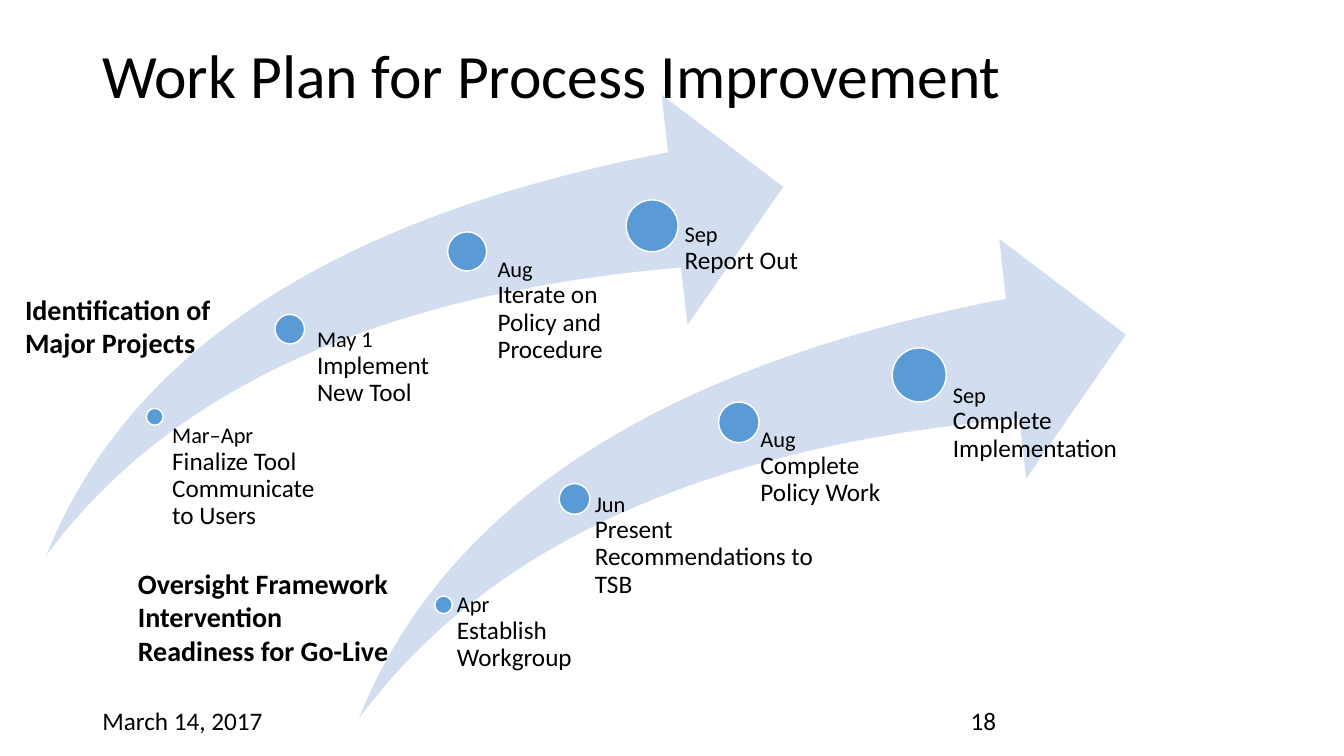
"""Build the process improvement work plan slide with two milestone arrows."""
from dataclasses import dataclass

import pptx
import pptx.dml.color
import pptx.enum.shapes
import pptx.enum.text
import pptx.shapes.autoshape
import pptx.slide
import pptx.util

COLOURS = {"arrow": "D2DEEF", "dot": "5B9BD5", "outline": "FFFFFF", "text": "000000"}
FONT = "Calibri"
DOT_SHARES = (0.023, 0.04, 0.053, 0.0704)
LABEL_INSET_SHARE = 0.53
Shape = pptx.enum.shapes.MSO_SHAPE


@dataclass(frozen=True)
class Frame:
    left: float
    top: float
    width: float
    height: float


@dataclass(frozen=True)
class Line:
    text: str
    size: float
    bold: bool = False


@dataclass(frozen=True)
class Caption:
    frame: Frame
    lines: tuple[Line, ...]
    spacing: float = 1.0


@dataclass(frozen=True)
class Milestone:
    centre: tuple[float, float]
    label: Frame
    date: str
    tasks: tuple[str, ...]


@dataclass(frozen=True)
class Track:
    arrow: Frame
    milestones: tuple[Milestone, ...]


TRACKS = (
    Track(Frame(256.3, 170.6, 547.9, 342.7), (
        Milestone((316.8, 432), Frame(319.7, 424, 118, 81.4), "Apr", ("Establish Workgroup",)),
        Milestone((410.4, 356.4), Frame(413.3, 352, 196.6, 156), "Jun",
                  ("Present Recommendations to TSB",)),
        Milestone((527.8, 301.7), Frame(527.8, 306, 115, 207), "Aug", ("Complete Policy Work",)),
        Milestone((656.6, 267.8), Frame(660.2, 274.3, 179.3, 98.6), "Sep",
                  ("Complete Implementation",)),
    )),
    Track(Frame(33.1, 67.7, 526.3, 329), (
        Milestone((110.5, 297.7), Frame(116.6, 303.1, 123, 78.5), "Mar–Apr",
                  ("Finalize Tool", "Communicate to Users")),
        Milestone((207, 235.1), Frame(215.3, 234.7, 111, 150.5), "May 1",
                  ("Implement New Tool",)),
        Milestone((333.7, 179.6), Frame(340.6, 184.3, 111, 204), "Aug",
                  ("Iterate on Policy and Procedure",)),
        Milestone((465.8, 161.3), Frame(469.4, 159.8, 111, 236), "Sep", ("Report Out",)),
    )),
)

CAPTIONS = (
    Caption(Frame(66, 28.8, 828, 104.4), (Line("Work Plan for Process Improvement", 44),), 0.9),
    Caption(Frame(10.8, 205.2, 172.8, 55.7),
            (Line("Identification of Major Projects", 20, True),)),
    Caption(Frame(91.4, 401, 199.4, 101.5),
            (Line("Oversight Framework", 20, True), Line("Intervention", 20, True),
             Line("Readiness for Go-Live", 20, True))),
    Caption(Frame(66, 500.4, 216, 28.8), (Line("March 14, 2017", 18),)),
    Caption(Frame(686.2, 500.4, 68.4, 28.8), (Line("18", 18),)),
)


def colour(name: str) -> pptx.dml.color.RGBColor:
    return pptx.dml.color.RGBColor.from_string(COLOURS[name])


def points(frame: Frame) -> tuple[pptx.util.Length, ...]:
    return tuple(pptx.util.Pt(value)
                 for value in (frame.left, frame.top, frame.width, frame.height))


def add_filled(page: pptx.slide.Slide, kind: Shape, frame: Frame,
               fill: str) -> pptx.shapes.autoshape.Shape:
    shape = page.shapes.add_shape(kind, *points(frame))
    shape.shadow.inherit = False
    shape.fill.solid()
    shape.fill.fore_color.rgb = colour(fill)
    shape.line.fill.background()
    return shape


def add_text(page: pptx.slide.Slide, caption: Caption) -> pptx.shapes.autoshape.Shape:
    box = page.shapes.add_textbox(*points(caption.frame))
    text_frame = box.text_frame
    text_frame.word_wrap = True
    text_frame.vertical_anchor = pptx.enum.text.MSO_ANCHOR.TOP
    for index, line in enumerate(caption.lines):
        para = text_frame.add_paragraph() if index else text_frame.paragraphs[0]
        para.line_spacing = caption.spacing
        span = para.add_run()
        span.text = line.text
        span.font.name = FONT
        span.font.size = pptx.util.Pt(line.size)
        span.font.bold = line.bold
        span.font.color.rgb = colour("text")
    return box


def add_milestone(page: pptx.slide.Slide, milestone: Milestone, diameter: float) -> None:
    across, down = milestone.centre
    radius = diameter / 2
    dot = add_filled(page, Shape.OVAL,
                     Frame(across - radius, down - radius, diameter, diameter), "dot")
    dot.line.color.rgb = colour("outline")
    dot.line.width = pptx.util.Pt(1)
    lines = (Line(milestone.date, 16), *(Line(task, 18) for task in milestone.tasks))
    text_frame = add_text(page, Caption(milestone.label, lines, 0.9)).text_frame
    text_frame.margin_left = pptx.util.Pt(diameter * LABEL_INSET_SHARE)
    text_frame.margin_top = text_frame.margin_right = text_frame.margin_bottom = 0


def add_track(page: pptx.slide.Slide, track: Track) -> None:
    arrow = add_filled(page, Shape.SWOOSH_ARROW, track.arrow, "arrow")
    arrow.adjustments[0] = 0.25
    arrow.adjustments[1] = 0.25
    for milestone, share in zip(track.milestones, DOT_SHARES):
        add_milestone(page, milestone, track.arrow.width * share)


def main() -> None:
    deck = pptx.Presentation()
    deck.slide_width = pptx.util.Pt(960)
    deck.slide_height = pptx.util.Pt(540)
    page = deck.slides.add_slide(deck.slide_layouts[6])
    for track in TRACKS:
        add_track(page, track)
    for caption in CAPTIONS:
        add_text(page, caption)
    deck.save("out.pptx")


if __name__ == "__main__":
    main()
